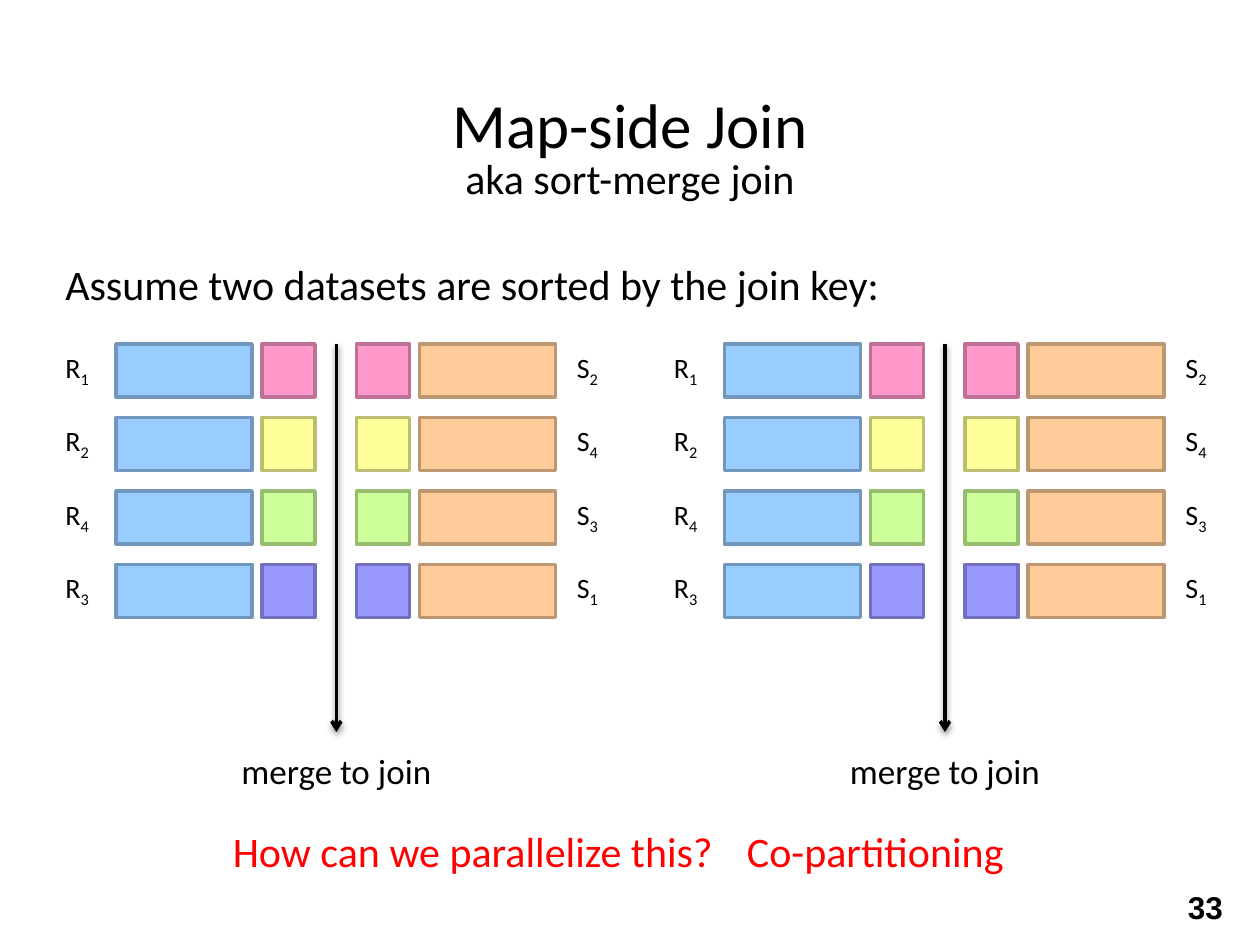
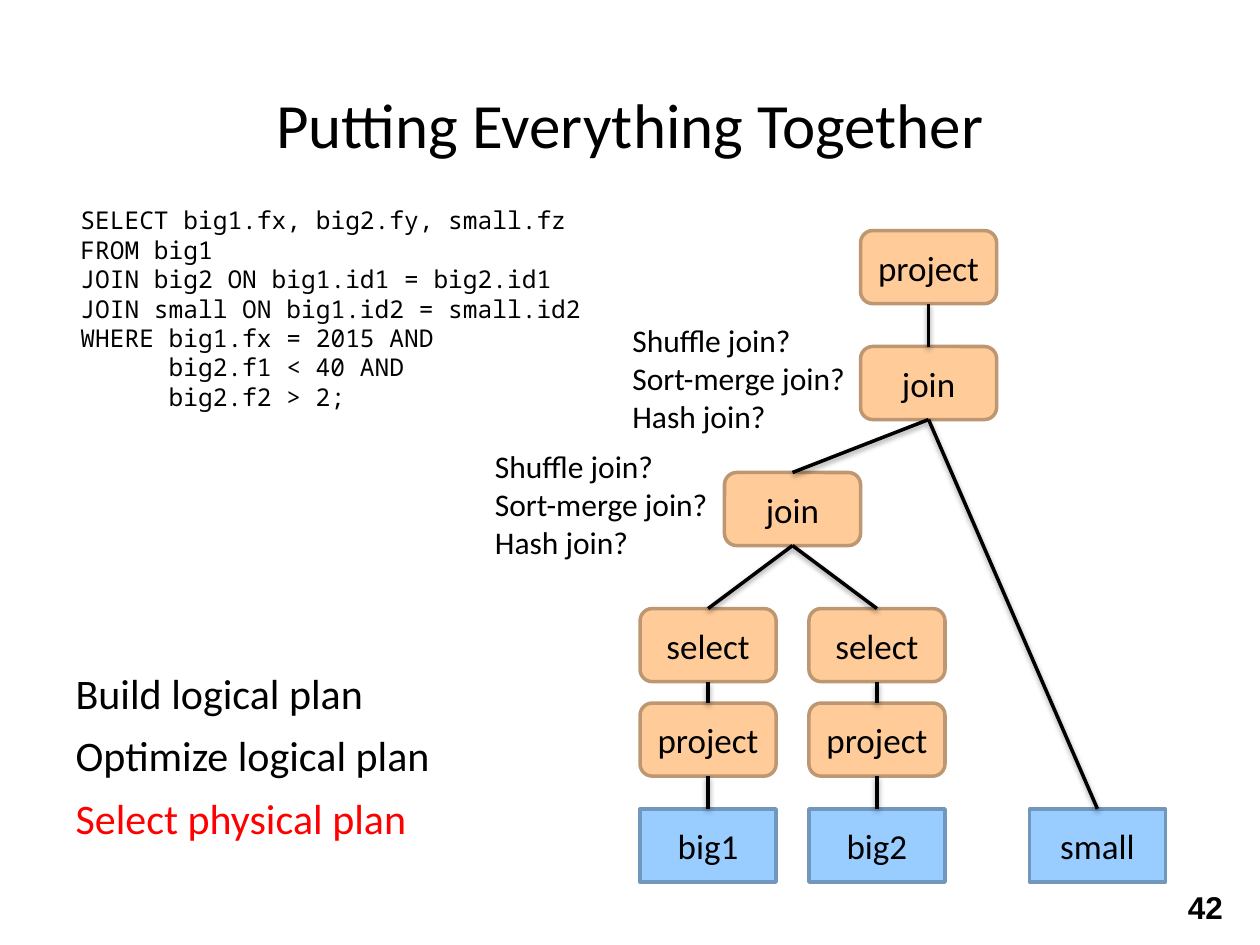
from lxml.etree import SubElement
from pptx import Presentation
from pptx.dml.color import RGBColor
from pptx.enum.shapes import MSO_CONNECTOR, MSO_SHAPE
from pptx.enum.text import MSO_ANCHOR, MSO_AUTO_SIZE, PP_ALIGN
from pptx.oxml import parse_xml
from pptx.oxml.ns import nsdecls, qn
from pptx.util import Inches, Pt

BLACK = RGBColor(0x00, 0x00, 0x00)
RED = RGBColor(0xFF, 0x00, 0x00)
BLUE = (RGBColor(0x99, 0xCC, 0xFF), RGBColor(0x71, 0x97, 0xBD))
ORANGE = (RGBColor(0xFF, 0xCC, 0x99), RGBColor(0xBD, 0x97, 0x71))
PINK = (RGBColor(0xFF, 0x99, 0xCC), RGBColor(0xBD, 0x71, 0x97))
YELLOW = (RGBColor(0xFF, 0xFF, 0x99), RGBColor(0xBD, 0xBD, 0x71))
GREEN = (RGBColor(0xCC, 0xFF, 0x99), RGBColor(0x97, 0xBD, 0x71))
VIOLET = (RGBColor(0x99, 0x99, 0xFF), RGBColor(0x71, 0x71, 0xBD))

BODY_FONT, CODE_FONT, NUMBER_FONT = "Calibri", "Noto Sans Mono", "Arial"

JOIN_ROWS = [("1", "2", PINK), ("2", "4", YELLOW), ("4", "3", GREEN), ("3", "1", VIOLET)]
PANEL_LEFTS = [0.42, 5.25]
ROW_TOP, ROW_PITCH, KEY_SIZE = 2.73, 7 / 12, 0.42

NODE_W, NODE_H = 1.08, 0.58
NODES = {
    "top project": ("project", 6.83, 1.83),
    "top join": ("join", 6.83, 2.75),
    "low join": ("join", 5.75, 3.75),
    "select 1": ("select", 5.08, 4.83),
    "select 2": ("select", 6.42, 4.83),
    "project 1": ("project", 5.08, 5.58),
    "project 2": ("project", 6.42, 5.58),
    "big1": ("big1", 5.08, 6.42),
    "big2": ("big2", 6.42, 6.42),
    "small": ("small", 8.17, 6.42),
}
TABLES = {"big1", "big2", "small"}
EDGES = [
    ("top join", "top project"), ("low join", "top join"), ("small", "top join"),
    ("select 1", "low join"), ("select 2", "low join"),
    ("project 1", "select 1"), ("project 2", "select 2"),
    ("big1", "project 1"), ("big2", "project 2"),
]
JOIN_CHOICES = ["Shuffle join?", "Sort-merge join?", "Hash join?"]
CHOICE_SPOTS = [(4.92, 2.5), (3.83, 3.5)]
PLAN_STEPS = [("Build logical plan", BLACK), ("Optimize logical plan", BLACK),
              ("Select physical plan", RED)]
QUERY = [
    ("SELECT big1.fx, big2.fy, small.fz", 0),
    ("FROM big1", 0),
    ("JOIN big2 ON big1.id1 = big2.id1", 0),
    ("JOIN small ON big1.id2 = small.id2", 0),
    ("WHERE big1.fx = 2015 AND", 0),
    ("big2.f1 < 40 AND", 0.7),
    ("big2.f2 > 2;", 0.7),
]


def add_run(p, text, size, color=BLACK, font=BODY_FONT, bold=False):
    r = p.add_run()
    r.text = text
    r.font.size, r.font.name, r.font.bold = Pt(size), font, bold
    r.font.color.rgb = color
    return r


def place(sp, x, y, w, h):
    sp.left, sp.top, sp.width, sp.height = (Inches(v) for v in (x, y, w, h))


def add_text(s, box, lines, size, color=BLACK, font=BODY_FONT, align=PP_ALIGN.LEFT,
             wrap=True, bold=False):
    tf = s.shapes.add_textbox(*(Inches(v) for v in box)).text_frame
    tf.word_wrap = wrap
    for i, line in enumerate(lines):
        p = tf.paragraphs[0] if i == 0 else tf.add_paragraph()
        p.alignment = align
        add_run(p, line, size, color, font, bold)
    return tf


def add_box(s, box, colors, kind=MSO_SHAPE.RECTANGLE):
    sp = s.shapes.add_shape(kind, *(Inches(v) for v in box))
    fill, line = colors
    sp.shadow.inherit = False
    sp.fill.solid()
    sp.fill.fore_color.rgb = fill
    sp.line.color.rgb = line
    sp.line.width = Pt(2)
    return sp


def add_line(s, x1=0, y1=0, x2=0, y2=0, arrow=False):
    cx = s.shapes.add_connector(MSO_CONNECTOR.STRAIGHT, *(Inches(v) for v in (x1, y1, x2, y2)))
    cx.line.color.rgb = BLACK
    cx.line.width = Pt(2)
    if arrow:
        SubElement(cx.line._get_or_add_ln(), qn("a:tailEnd"), type="arrow")
    cx._element.spPr.append(parse_xml(
        f'<a:effectLst {nsdecls("a")}><a:outerShdw blurRad="40000" dist="20000" dir="5400000" '
        'rotWithShape="0"><a:srgbClr val="000000"><a:alpha val="38000"/></a:srgbClr>'
        '</a:outerShdw></a:effectLst>'))
    return cx


def add_slide(prs, layout, title, number):
    s = prs.slides.add_slide(prs.slide_layouts[layout])
    place(s.shapes.title, 0, 0.6, 10, 0.75)
    tf = s.shapes.title.text_frame
    tf.auto_size = MSO_AUTO_SIZE.NONE
    tf.vertical_anchor = MSO_ANCHOR.MIDDLE
    p = tf.paragraphs[0]
    p.alignment = PP_ALIGN.CENTER
    add_run(p, title, 36)
    add_text(s, (9.33, 7, 0.58, 0.4), [number], 18, font=NUMBER_FONT, bold=True)
    return s


def add_label(s, x, y, w, letter, index):
    tf = add_text(s, (x, y, w, 0.37), [letter], 16, wrap=False)
    r = add_run(tf.paragraphs[0], index, 16)
    r._r.get_or_add_rPr().set("baseline", "-25000")


def add_join_panel(s, x):
    for i, (r_index, s_index, key_colors) in enumerate(JOIN_ROWS):
        y = ROW_TOP + i * ROW_PITCH
        add_label(s, x, y, 0.41, "R", r_index)
        add_box(s, (x + 0.5, y, 1.08, KEY_SIZE), BLUE)
        for key_x in (1.66, 2.41):
            add_box(s, (x + key_x, y, KEY_SIZE, KEY_SIZE), key_colors)
        add_box(s, (x + 2.91, y, 1.08, KEY_SIZE), ORANGE)
        add_label(s, x + 4.06, y, 0.38, "S", s_index)
    add_line(s, x + 2.25, ROW_TOP, x + 2.25, 5.81, arrow=True)
    add_text(s, (x + 1, 5.9, 2.5, 0.44), ["merge to join"], 20, align=PP_ALIGN.CENTER)


def build_join_slide(prs):
    s = add_slide(prs, 5, "Map-side Join", "33")
    add_text(s, (0, 1.16, 10, 0.5), ["aka sort-merge join"], 24, align=PP_ALIGN.CENTER)
    add_text(s, (0.42, 2, 7, 0.5), ["Assume two datasets are sorted by the join key:"], 24)
    for x in PANEL_LEFTS:
        add_join_panel(s, x)
    add_text(s, (1.75, 6.5, 4.04, 0.5), ["How can we parallelize this?"], 24, RED, wrap=False)
    add_text(s, (5.83, 6.5, 2.3, 0.5), ["Co-partitioning"], 24, RED, wrap=False)


def add_plan_steps(s):
    body = s.placeholders[1]
    place(body, 0.5, 5.25, 3.58, 1.5)
    tf = body.text_frame
    tf.auto_size = MSO_AUTO_SIZE.NONE
    for i, (step, color) in enumerate(PLAN_STEPS):
        p = tf.paragraphs[0] if i == 0 else tf.add_paragraph()
        p.space_before, p.space_after = Pt(0), Pt(6.7)
        pPr = p._p.get_or_add_pPr()
        pPr.set("marL", "0")
        pPr.set("indent", "0")
        SubElement(pPr, qn("a:buNone"))
        add_run(p, step, 24, color)


def add_plan_tree(s):
    nodes = {}
    for name, (text, x, y) in NODES.items():
        is_table = name in TABLES
        sp = add_box(s, (x, y, NODE_W, NODE_H), BLUE if is_table else ORANGE,
                     MSO_SHAPE.RECTANGLE if is_table else MSO_SHAPE.ROUNDED_RECTANGLE)
        tf = sp.text_frame
        tf.word_wrap = True
        tf.vertical_anchor = MSO_ANCHOR.MIDDLE
        tf.margin_left = tf.margin_right = Inches(0.05)
        p = tf.paragraphs[0]
        p.alignment = PP_ALIGN.CENTER
        add_run(p, text, 20)
        nodes[name] = sp
    for child, parent in EDGES:
        cx = add_line(s)
        cx.begin_connect(nodes[child], 0)
        cx.end_connect(nodes[parent], 2)


def build_plan_slide(prs):
    s = add_slide(prs, 1, "Putting Everything Together", "42")
    add_plan_steps(s)
    add_plan_tree(s)
    for x, y in CHOICE_SPOTS:
        add_text(s, (x, y, 1.92, 1.01), JOIN_CHOICES, 18)
    tf = add_text(s, (0.54, 1.58, 4.21, 1.75), [line for line, _ in QUERY], 14,
                  font=CODE_FONT, wrap=False)
    for p, (_, indent) in zip(tf.paragraphs, QUERY):
        p._p.get_or_add_pPr().set("marL", str(Inches(indent)))


def main():
    prs = Presentation()
    prs.slide_width, prs.slide_height = Inches(10), Inches(7.5)
    build_join_slide(prs)
    build_plan_slide(prs)
    prs.save("out.pptx")


if __name__ == "__main__":
    main()
